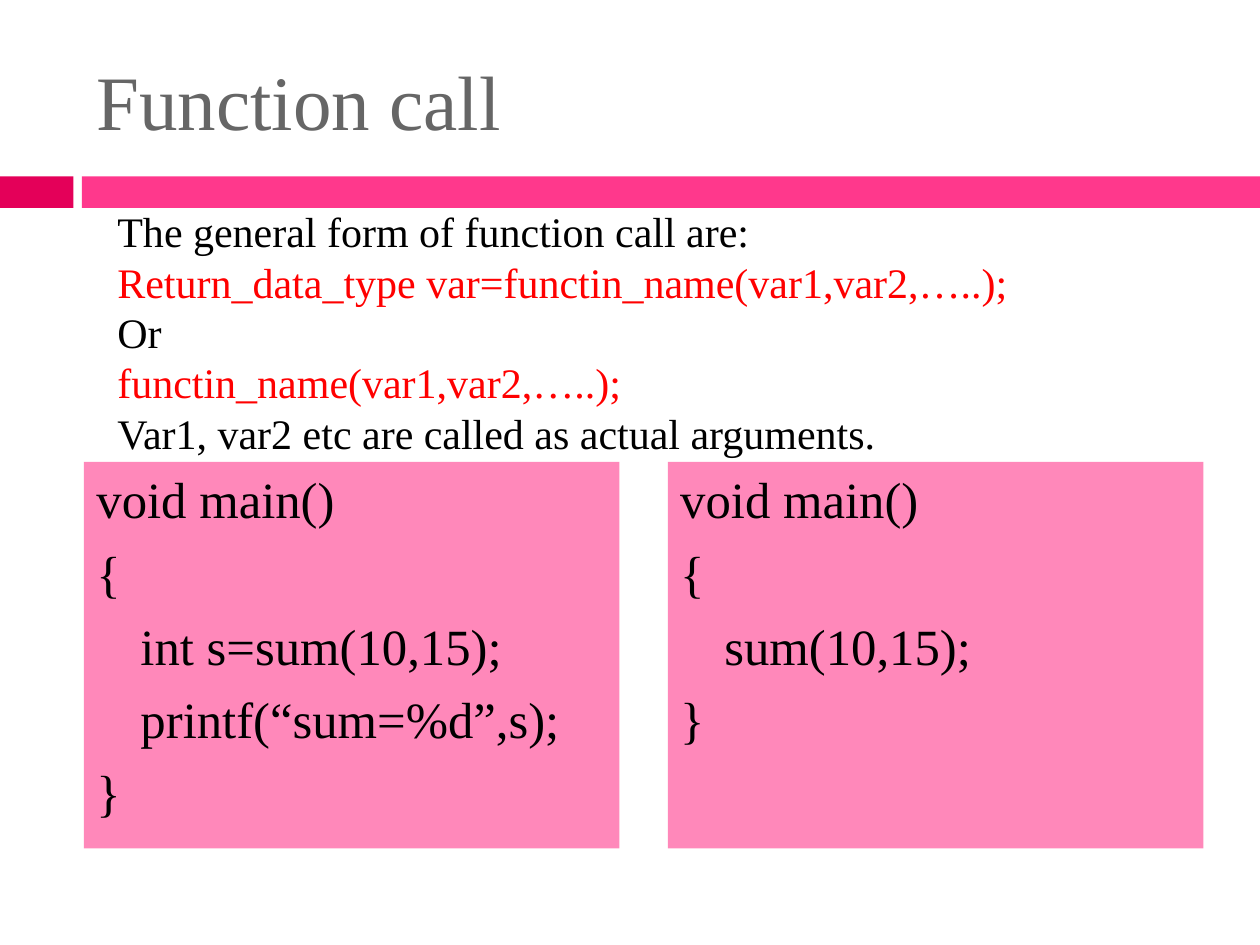
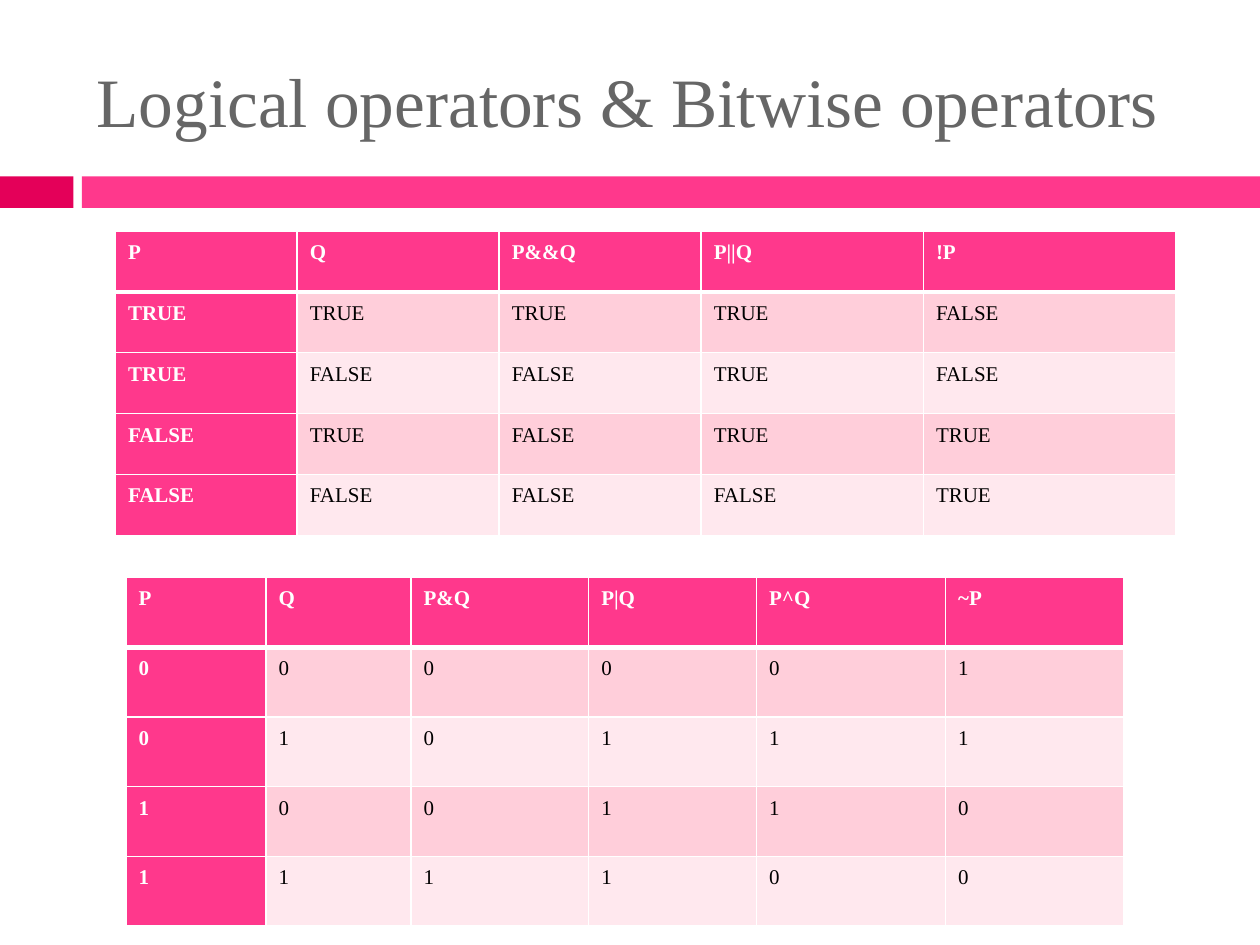
from lxml import etree
from pptx import Presentation
from pptx.dml.color import RGBColor
from pptx.enum.shapes import MSO_SHAPE
from pptx.enum.text import MSO_ANCHOR, MSO_AUTO_SIZE, PP_ALIGN
from pptx.oxml.ns import qn
from pptx.util import Inches, Pt

RECT = MSO_SHAPE.RECTANGLE
TOP, MIDDLE = MSO_ANCHOR.TOP, MSO_ANCHOR.MIDDLE
LEFT, JUSTIFY = PP_ALIGN.LEFT, PP_ALIGN.JUSTIFY
FIXED = MSO_AUTO_SIZE.NONE

BLACK = RGBColor(0x00, 0x00, 0x00)
WHITE = RGBColor(0xFF, 0xFF, 0xFF)
GREY = RGBColor(0x66, 0x66, 0x66)
RED = RGBColor(0xFF, 0x00, 0x00)
DARK = RGBColor(0xE4, 0x00, 0x59)
PINK = RGBColor(0xFF, 0x38, 0x8C)
PANEL = RGBColor(0xFF, 0x88, 0xBA)
ODD = RGBColor(0xFF, 0xCE, 0xDA)
EVEN = RGBColor(0xFF, 0xE8, 0xEE)

FONT = "Times New Roman"
COLS, ROWS = 120, 90
TITLE_ONLY = 5


def write(frame, lines, size, color=BLACK, bold=False, align=LEFT, anchor=TOP,
          before=0, after=0, spacing=1.0, hang=0, marks=()):
    frame.word_wrap = True
    frame.vertical_anchor = anchor
    for num, line in enumerate(lines):
        para = frame.add_paragraph() if num else frame.paragraphs[0]
        para.alignment = align
        para.space_before, para.space_after = Pt(before), Pt(after)
        para.line_spacing = spacing
        if hang:
            props = para._p.get_or_add_pPr()
            props.set("marL", str(Inches(hang)))
            props.set("indent", str(-Inches(hang)))
        run = para.add_run()
        run.text = line
        font = run.font
        font.name, font.size, font.bold = FONT, Pt(size), bold
        font.color.rgb = RED if num in marks else color


def edge(cell, widths):
    props = cell._tc.get_or_add_tcPr()
    for num, (side, width) in enumerate(widths.items()):
        line = etree.Element(qn("a:ln" + side), w=str(Pt(width)))
        fill = etree.SubElement(line, qn("a:solidFill"))
        etree.SubElement(fill, qn("a:srgbClr"), val=str(WHITE))
        props.insert(num, line)


class Deck:
    def __init__(self):
        self.show = Presentation()
        self.show.slide_width = Inches(10)
        self.show.slide_height = Inches(7.5)
        self.slide = None

    def area(self, left, top, width, height):
        col = self.show.slide_width / COLS
        row = self.show.slide_height / ROWS
        return (round(left * col), round(top * row),
                round(width * col), round(height * row))

    def start(self, title, size):
        layout = self.show.slide_layouts[TITLE_ONLY]
        self.slide = self.show.slides.add_slide(layout)
        self.block((0, 16.8, 7, 3), DARK)
        self.block((7.8, 16.8, 112.2, 3), PINK)
        head = self.slide.shapes.title
        head.left, head.top, head.width, head.height = self.area(8, 3, 107, 13)
        head.text_frame.auto_size = FIXED
        write(head.text_frame, [title], size, color=GREY, anchor=MIDDLE)

    def block(self, place, color):
        shape = self.slide.shapes.add_shape(RECT, *self.area(*place))
        shape.shadow.inherit = False
        shape.fill.solid()
        shape.fill.fore_color.rgb = color
        shape.line.fill.background()
        return shape

    def code(self, left, lines):
        panel = self.block((left, 44, 51, 36.8), PANEL)
        write(panel.text_frame, lines, 29, before=7, hang=0.35)

    def note(self, place, lines, **style):
        box = self.slide.shapes.add_textbox(*self.area(*place))
        write(box.text_frame, lines, **style)

    def table(self, place, shares, rows):
        zone = self.area(*place)
        grid = self.slide.shapes.add_table(len(rows), len(shares), *zone).table
        for col, share in zip(grid.columns, shares):
            col.width = round(zone[2] * share / sum(shares))
        for r, row in enumerate(rows):
            for c, word in enumerate(row.split()):
                cell = grid.cell(r, c)
                head = r == 0 or c == 0
                cell.fill.solid()
                cell.fill.fore_color.rgb = PINK if head else ODD if r % 2 else EVEN
                edge(cell, {"L": 1, "R": 1, "T": 3 if r == 1 else 1,
                            "B": 1 if r else 3})
                write(cell.text_frame, [word], 12, bold=head,
                      color=WHITE if head else BLACK,
                      align=JUSTIFY, after=10, spacing=1.15)


def main():
    deck = Deck()

    deck.start("Function call", 44)
    deck.code(8, ["void main()", "{", "\tint s=sum(10,15);",
                  "\tprintf(“sum=%d”,s);", "}"])
    deck.code(63.6, ["void main()", "{", "\tsum(10,15);", "}"])
    deck.note((10, 19, 107, 25.4),
              ["The general form of function call are:",
               "Return_data_type var=functin_name(var1,var2,…..);",
               "Or",
               "functin_name(var1,var2,…..);",
               "Var1, var2 etc are called as actual arguments."],
              size=24, marks=(1, 3))

    deck.start("Logical operators & Bitwise operators", 39.6)
    deck.table((12, 55, 95, 33.2), (1.11, 1.15, 1.41, 1.33, 1.5, 1.41),
               ["P Q P&Q P|Q P^Q ~P",
                "0 0 0 0 0 1",
                "0 1 0 1 1 1",
                "1 0 0 1 1 0",
                "1 1 1 1 0 0"])
    deck.table((11, 22, 101, 29), (18, 20, 20, 22, 25),
               ["P Q P&&Q P||Q !P",
                "TRUE TRUE TRUE TRUE FALSE",
                "TRUE FALSE FALSE TRUE FALSE",
                "FALSE TRUE FALSE TRUE TRUE",
                "FALSE FALSE FALSE FALSE TRUE"])

    deck.show.save("out.pptx")


if __name__ == "__main__":
    main()
